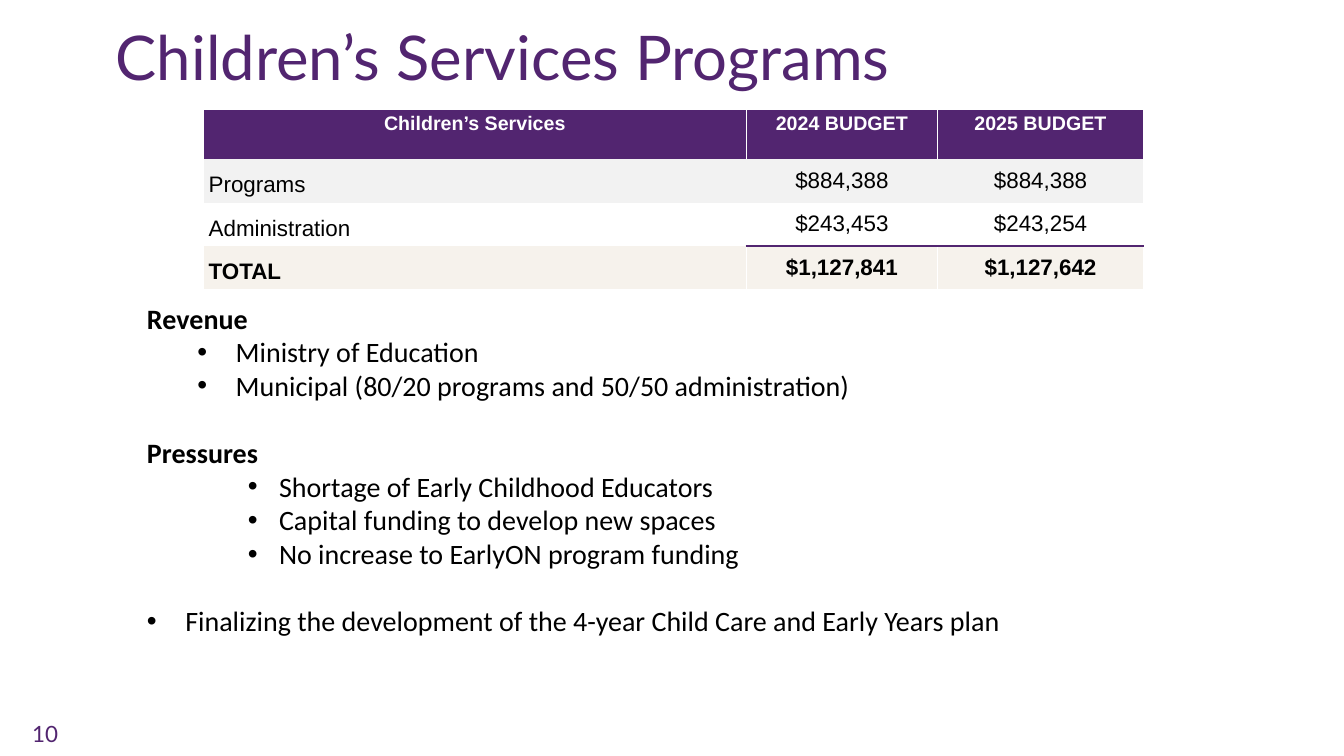
from lxml.etree import SubElement
from pptx import Presentation
from pptx.dml.color import RGBColor
from pptx.enum.text import MSO_ANCHOR, PP_ALIGN
from pptx.oxml.ns import qn
from pptx.util import Inches, Pt

PURPLE, WHITE, BLACK = "522570", "FFFFFF", "000000"

BUDGET = [
    ("Children’s Services", "2024 BUDGET", "2025 BUDGET"),
    ("Programs", "$884,388", "$884,388"),
    ("Administration", "$243,453", "$243,254"),
    ("TOTAL", "$1,127,841", "$1,127,642"),
]
COLUMN_WIDTHS = (5.38, 1.9, 2.04)
ROW_HEIGHTS = (0.49, 0.43, 0.43, 0.43)
ROW_FILLS = (PURPLE, "F2F2F2", None, "F6F2EC")

HEADING = (0.5, 0)
REVENUE_ITEM = (1.38, -0.38)
PRESSURE_ITEM = (1.81, -0.31)
PLAN_ITEM = (0.88, -0.38)
OUTLINE = [
    ("Revenue", HEADING, 0),
    ("Ministry of Education", REVENUE_ITEM, 0),
    ("Municipal (80/20 programs and 50/50 administration)", REVENUE_ITEM, 0),
    ("Pressures", HEADING, 24),
    ("Shortage of Early Childhood Educators", PRESSURE_ITEM, 0),
    ("Capital funding to develop new spaces", PRESSURE_ITEM, 0),
    ("No increase to EarlyON program funding", PRESSURE_ITEM, 0),
    ("Finalizing the development of the 4-year Child Care and Early Years plan", PLAN_ITEM, 24),
]


def rgb(value):
    return RGBColor.from_string(value)


def style(paragraph, name, size, color, bold=False):
    font = paragraph.font
    font.name, font.size, font.bold = name, Pt(size), bold
    font.color.rgb = rgb(color)


def add_frame(slide, left, top, width, height, anchor):
    box = slide.shapes.add_textbox(Inches(left), Inches(top), Inches(width), Inches(height))
    frame = box.text_frame
    frame.word_wrap = True
    frame.vertical_anchor = anchor
    return frame


def add_label(slide, text, bounds, size, line_spacing=1.0):
    paragraph = add_frame(slide, *bounds, MSO_ANCHOR.MIDDLE).paragraphs[0]
    paragraph.text = text
    paragraph.line_spacing = line_spacing
    style(paragraph, "Lato", size, PURPLE)


def indent(paragraph, left, hanging):
    properties = paragraph._p.get_or_add_pPr()
    properties.set("marL", str(Inches(left)))
    properties.set("indent", str(Inches(hanging)))
    if hanging:
        SubElement(properties, qn("a:buFont")).set("typeface", "Arial")
        SubElement(properties, qn("a:buChar")).set("char", "•")


def add_outline(slide):
    frame = add_frame(slide, 0.86, 2.94, 12.3, 3.47, MSO_ANCHOR.TOP)
    for index, (text, level, gap) in enumerate(OUTLINE):
        paragraph = frame.add_paragraph() if index else frame.paragraphs[0]
        paragraph.text = text
        indent(paragraph, *level)
        paragraph.space_before = Pt(gap)
        style(paragraph, "Calibri", 20, BLACK, level == HEADING)


def set_borders(cell, colors):
    properties = cell._tc.get_or_add_tcPr()
    for position, (side, color) in enumerate(zip("LRTB", colors)):
        line = SubElement(properties, qn(f"a:ln{side}"))
        line.set("w", str(Pt(1 if color == PURPLE else 0.75)))
        if color:
            fill = SubElement(line, qn("a:solidFill"))
            SubElement(fill, qn("a:srgbClr")).set("val", color)
        else:
            SubElement(line, qn("a:noFill"))
        properties.insert(position, line)


def border_colors(row, column):
    total_rule = PURPLE if column else WHITE
    return [
        (WHITE, WHITE, WHITE, None),
        (None, None, None, None),
        (WHITE, WHITE, None, total_rule),
        (WHITE, WHITE, total_rule, WHITE),
    ][row]


def fill_cell(cell, text, row, column):
    header = row == 0
    side, edge = (0.07, 0.03) if header else (0.05, 0.05)
    cell.margin_left = cell.margin_right = Inches(side)
    cell.margin_top = cell.margin_bottom = Inches(edge)
    if header:
        cell.vertical_anchor = MSO_ANCHOR.TOP
    else:
        cell.vertical_anchor = MSO_ANCHOR.MIDDLE if column else MSO_ANCHOR.BOTTOM
    if ROW_FILLS[row]:
        cell.fill.solid()
        cell.fill.fore_color.rgb = rgb(ROW_FILLS[row])
    else:
        cell.fill.background()
    set_borders(cell, border_colors(row, column))
    paragraph = cell.text_frame.paragraphs[0]
    paragraph.text = text
    paragraph.alignment = PP_ALIGN.CENTER if header or column else PP_ALIGN.LEFT
    style(paragraph, "Arial", 14 if header else 16, WHITE if header else BLACK, row in (0, 3))


def add_budget(slide):
    table = slide.shapes.add_table(
        len(BUDGET), len(COLUMN_WIDTHS), Inches(2.02), Inches(1.09),
        Inches(sum(COLUMN_WIDTHS)), Inches(sum(ROW_HEIGHTS)),
    ).table
    table.first_row = table.horz_banding = False
    for column, width in zip(table.columns, COLUMN_WIDTHS):
        column.width = Inches(width)
    for row, height in zip(table.rows, ROW_HEIGHTS):
        row.height = Inches(height)
    for row, texts in enumerate(BUDGET):
        for column, text in enumerate(texts):
            fill_cell(table.cell(row, column), text, row, column)


def main():
    presentation = Presentation()
    presentation.slide_width, presentation.slide_height = Inches(13.33), Inches(7.5)
    slide = presentation.slides.add_slide(presentation.slide_layouts[6])
    add_label(slide, "10", (0.22, 7.08, 3, 0.4), 16)
    add_label(slide, "Children’s Services Programs", (1.05, 0.14, 11.5, 0.93), 44, 0.9)
    add_outline(slide)
    add_budget(slide)
    presentation.save("out.pptx")


if __name__ == "__main__":
    main()
